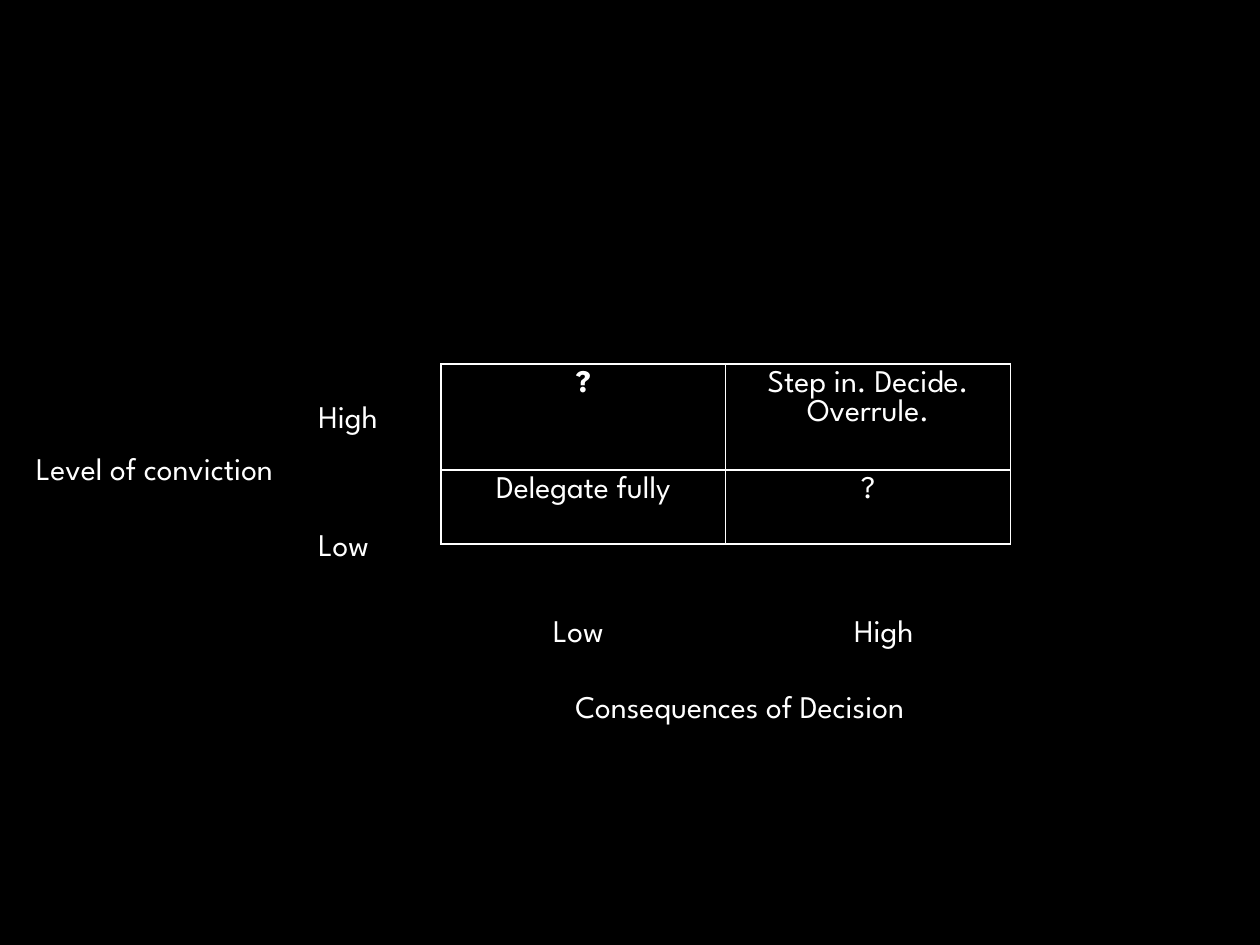
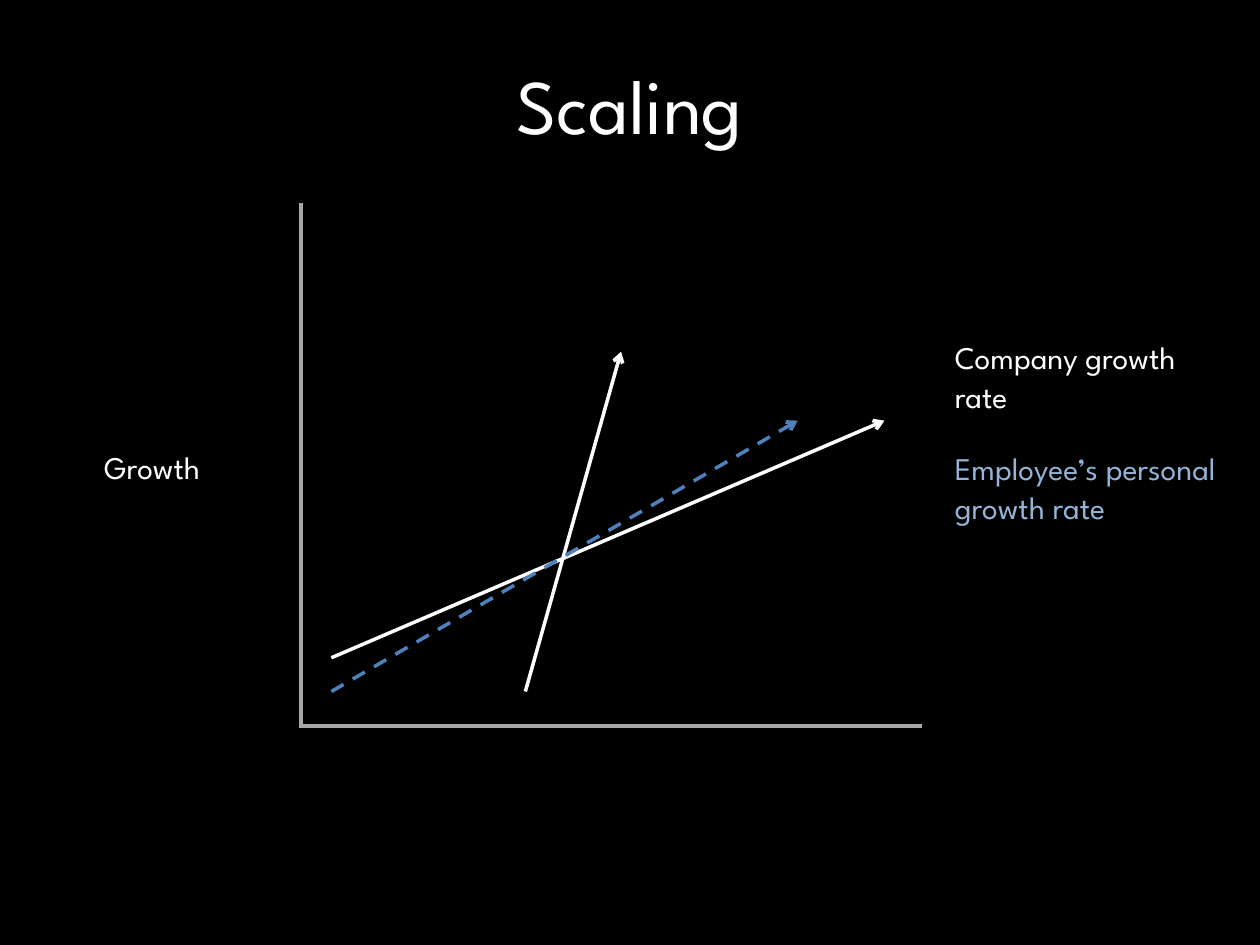
import pptx
import pptx.dml.color
import pptx.enum.dml
import pptx.enum.shapes
import pptx.enum.text
import pptx.oxml.ns
import pptx.util
from lxml import etree

Cm = pptx.util.Cm
Pt = pptx.util.Pt
ALIGN = pptx.enum.text.PP_ALIGN
COLOURS = {
    "ground": "000000",
    "text": "FFFFFF",
    "axis": "A6A6A6",
    "employee": "4F81BD",
    "employee_text": "95B3D7",
}
FONT = "League Spartan"
BODY_SIZE = 18
LINE_HEIGHT = 1.22
LABEL_HEIGHT = 1.02


def rgb(name):
    return pptx.dml.color.RGBColor.from_string(COLOURS[name])


def add_child(parent, tag, **attributes):
    return etree.SubElement(parent, pptx.oxml.ns.qn(tag), attributes)


def write(frame, text, size=BODY_SIZE, colour="text", bold=False,
          align=ALIGN.LEFT, line_spacing=None):
    para = frame.paragraphs[0]
    para.alignment = align
    if line_spacing:
        para.line_spacing = line_spacing
    span = para.add_run()
    span.text = text
    span.font.name = FONT
    span.font.size = Pt(size)
    span.font.bold = bold
    span.font.color.rgb = rgb(colour)


def add_label(page, text, left, top, width, height=LABEL_HEIGHT, wrap=False,
              anchor=pptx.enum.text.MSO_ANCHOR.TOP, size=BODY_SIZE, **style):
    box = page.shapes.add_textbox(Cm(left), Cm(top), Cm(width), Cm(height))
    box.text_frame.word_wrap = wrap
    box.text_frame.vertical_anchor = anchor
    write(box.text_frame, text, size=size,
          line_spacing=Pt(size * LINE_HEIGHT), **style)


def add_line(page, start, end, colour, arrow=False, dashed=False):
    line = page.shapes.add_connector(
        pptx.enum.shapes.MSO_CONNECTOR.STRAIGHT,
        *(Cm(value) for value in (*start, *end)))
    line.line.width = Pt(2)
    line.line.color.rgb = rgb(colour)
    if dashed:
        line.line.dash_style = pptx.enum.dml.MSO_LINE.DASH
    if arrow:
        add_child(line.line._get_or_add_ln(), "a:tailEnd", type="arrow")
    add_child(line._element.spPr, "a:effectLst")


def add_page(deck):
    page = deck.slides.add_slide(deck.slide_layouts[6])
    page.background.fill.solid()
    page.background.fill.fore_color.rgb = rgb("ground")
    return page


def add_title(page, text, left, top, width, height):
    add_label(page, text, left, top, width, height, wrap=True, size=44,
              anchor=pptx.enum.text.MSO_ANCHOR.MIDDLE, align=ALIGN.CENTER)


def outline_cell(cell):
    properties = cell._tc.get_or_add_tcPr()
    for side in ("a:lnL", "a:lnR", "a:lnT", "a:lnB"):
        border = add_child(properties, side, w=str(Pt(1)))
        fill = add_child(border, "a:solidFill")
        add_child(fill, "a:srgbClr", val=COLOURS["text"])
    cell.fill.background()


def add_decision_table(page, left, top, width, row_heights):
    answers = (("?", "Step in. Decide. Overrule."), ("Delegate fully", "?"))
    table = page.shapes.add_table(
        2, 2, Cm(left), Cm(top), Cm(width), Cm(sum(row_heights))).table
    table.first_row = table.horz_banding = False
    for column in table.columns:
        column.width = Cm(width / 2)
    for row, (height, texts) in enumerate(zip(row_heights, answers)):
        table.rows[row].height = Cm(height)
        for column, text in enumerate(texts):
            cell = table.cell(row, column)
            outline_cell(cell)
            write(cell.text_frame, text, align=ALIGN.CENTER,
                  bold=row == column == 0)


def add_decision_matrix(page, left, top, width, row_heights):
    add_decision_table(page, left, top, width, row_heights)
    labels = (
        ("Consequences of Decision", 2.46, 6.38, 8.84),
        ("Level of conviction", -8.41, 1.58, 6.38),
        ("High", -2.72, 0.53, 1.9),
        ("Low", -2.72, 3.1, 1.75),
        ("High", 8.08, 4.85, 1.9),
        ("Low", 2.01, 4.85, 1.75),
    )
    for text, across, down, label_width in labels:
        add_label(page, text, left + across, top + down, label_width)


def add_growth_graph(page, left, top, width, height):
    bottom = top + height
    add_line(page, (left, top), (left, bottom + 0.05), "axis")
    add_line(page, (left, bottom), (left + width, bottom), "axis")

    arrows = (
        ((0.61, 9.17), (11.76, 4.39), "text", False),
        ((4.52, 9.85), (6.45, 3), "text", False),
        ((0.61, 9.85), (10.01, 4.39), "employee", True),
    )
    for start, end, colour, dashed in arrows:
        add_line(page, (left + start[0], top + start[1]),
                 (left + end[0], top + end[1]), colour,
                 arrow=True, dashed=dashed)

    add_label(page, "Growth", left - 4.22, top + 4.8, 2.82)
    legend_left = left + width + 0.41
    add_label(page, "Company growth rate", legend_left, top + 2.59,
              5.79, 1.8, wrap=True)
    add_label(page, "Employee’s personal growth rate", legend_left, top + 4.83,
              5.79, 2.57, wrap=True, colour="employee_text")


def main():
    deck = pptx.Presentation()
    deck.slide_width, deck.slide_height = Cm(25.4), Cm(19.05)

    add_decision_matrix(add_page(deck), 8.89, 7.34, 11.48, (2.13, 1.5))

    scaling = add_page(deck)
    add_growth_graph(scaling, 6.07, 4.09, 12.52, 10.54)
    add_title(scaling, "Scaling", 0, 0.48, 25.4, 3.18)

    deck.save("out.pptx")


if __name__ == "__main__":
    main()
